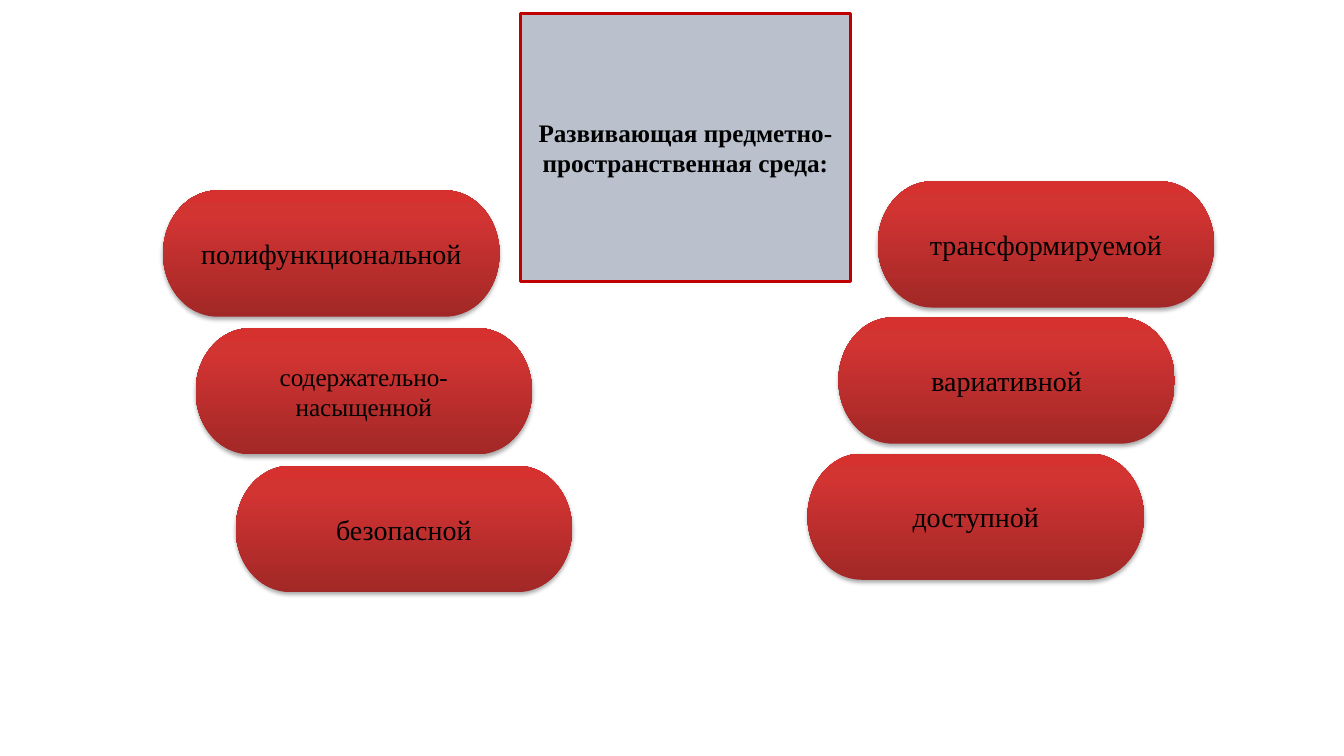
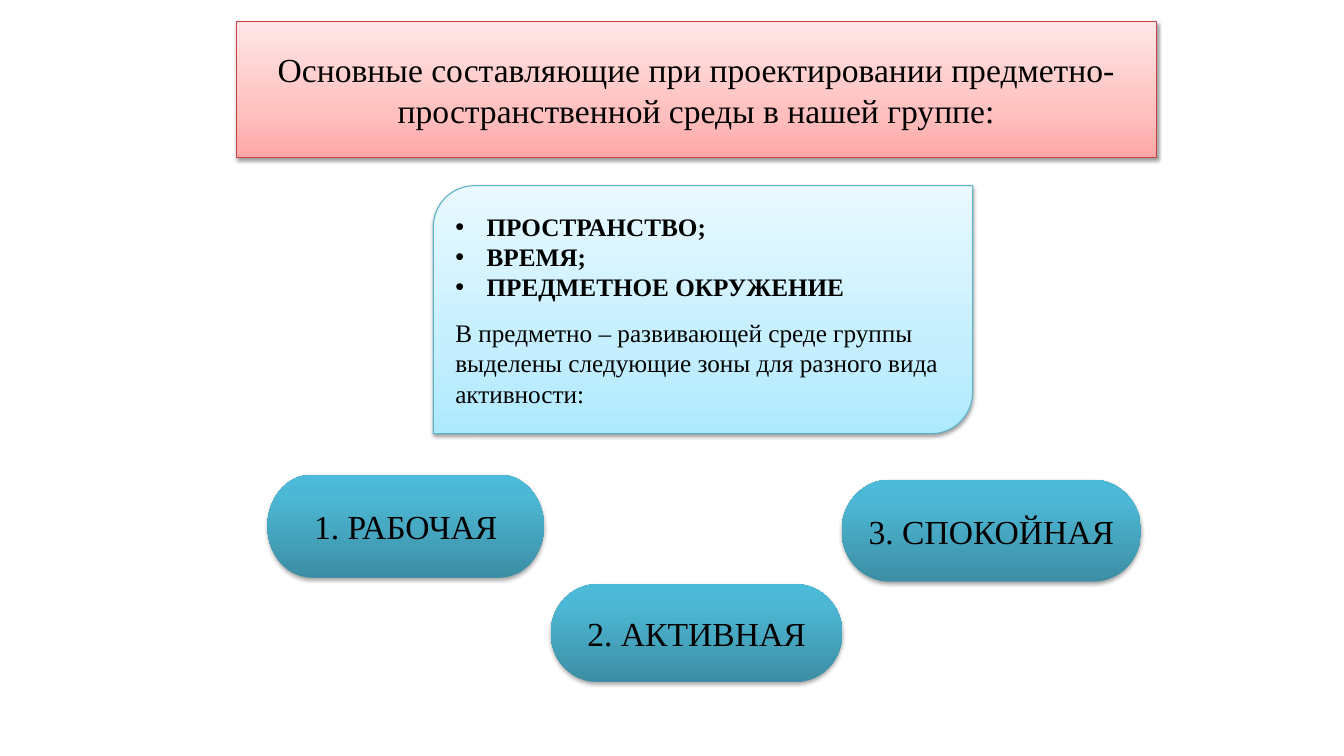
"""Build two slides about the developing spatial environment of a kindergarten group."""
from dataclasses import dataclass

from lxml.etree import SubElement
from pptx import Presentation
from pptx.dml.color import RGBColor
from pptx.enum.shapes import MSO_SHAPE
from pptx.enum.text import MSO_ANCHOR, MSO_AUTO_SIZE, PP_ALIGN
from pptx.oxml.ns import qn
from pptx.util import Cm, Pt


@dataclass(frozen=True)
class Look:
    """Fill stops from bottom to top, outline and shadow of one kind of shape."""
    stops: tuple
    line: str = ""
    line_width: float = 0.75
    shadow: tuple = ()


@dataclass(frozen=True)
class Theme:
    """Colours, type sizes and looks shared by the slides."""
    font: str = "Times New Roman"
    text: str = "000000"
    heading_size: int = 24
    label_size: int = 20
    body_size: int = 18
    paragraph_gap: int = 11
    dark_shadow: tuple = (35, 3.1, 1.8)
    light_shadow: tuple = (38, 3.1, 1.6)
    grey: Look = Look(((0, "BAC0CC"),), "C00000", 2)
    red: Look = Look(((0, "A22827"), (80, "D23432"), (100, "D6312F")), shadow=dark_shadow)
    teal: Look = Look(((0, "3C8EA4"), (80, "4DB8D5"), (100, "4BBBD9")), shadow=dark_shadow)
    pink: Look = Look(((0, "FFA7A7"), (35, "FFC1C0"), (100, "FFE7E7")), "C54342",
                      shadow=light_shadow)
    sky: Look = Look(((0, "ADE9FF"), (35, "C5EFFF"), (100, "E9F9FF")), "5BB3CA",
                     shadow=light_shadow)


THEME = Theme()

ENVIRONMENT_TITLE = "Развивающая предметно-пространственная среда:"
QUALITY_SIZE = (8.48, 3.18)
QUALITY_COLUMNS = [
    {"top": 4.8, "step": 3.47, "items": [
        (4.11, "полифункциональной", THEME.label_size),
        (4.93, "содержательно-насыщенной", THEME.body_size),
        (5.94, "безопасной", THEME.label_size)]},
    {"top": 4.57, "step": 3.43, "items": [
        (22.12, "трансформируемой", THEME.label_size),
        (21.13, "вариативной", THEME.label_size),
        (20.35, "доступной", THEME.label_size)]},
]

COMPONENTS_TITLE = ("Основные составляющие при проектировании "
                    "предметно-пространственной среды в нашей группе:")
COMPONENTS = ["ПРОСТРАНСТВО;", "ВРЕМЯ;", "ПРЕДМЕТНОЕ ОКРУЖЕНИЕ"]
ZONES_INTRO = ("В предметно – развивающей среде группы выделены "
               "следующие зоны для разного вида активности:")
ZONES = [
    ("1. РАБОЧАЯ", (6.74, 11.96, 6.97, 2.6)),
    ("3. СПОКОЙНАЯ", (21.21, 12.09, 7.55, 2.57)),
    ("2. АКТИВНАЯ", (13.88, 14.72, 7.35, 2.47)),
]


def add_child(parent, tag, **attributes):
    """Append a DrawingML element to a parent element."""
    return SubElement(parent, qn(tag), {key: str(value) for key, value in attributes.items()})


def add_color(parent, color):
    """Append an RGB colour element."""
    return add_child(parent, "a:srgbClr", val=color)


def apply_look(shape, look):
    """Give a shape its fill, outline and shadow."""
    if len(look.stops) == 1:
        shape.fill.solid()
        shape.fill.fore_color.rgb = RGBColor.from_string(look.stops[0][1])
    else:
        shape.fill.gradient()
        gradient = shape._element.spPr.find(qn("a:gradFill"))
        for child in list(gradient):
            gradient.remove(child)
        stop_list = add_child(gradient, "a:gsLst")
        for position, color in look.stops:
            add_color(add_child(stop_list, "a:gs", pos=position * 1000), color)
        add_child(gradient, "a:lin", ang=270 * 60000, scaled=0)
    if look.line:
        shape.line.color.rgb = RGBColor.from_string(look.line)
        shape.line.width = Pt(look.line_width)
    else:
        shape.line.fill.background()
    shape.shadow.inherit = False
    if look.shadow:
        opacity, blur, distance = look.shadow
        effects = shape._element.spPr.find(qn("a:effectLst"))
        shadow = add_child(effects, "a:outerShdw", blurRad=Pt(blur), dist=Pt(distance),
                           dir=90 * 60000, rotWithShape=0)
        add_child(add_color(shadow, THEME.text), "a:alpha", val=opacity * 1000)


def add_text(paragraph, text, size, bold=False, alignment=PP_ALIGN.CENTER):
    """Add one formatted run to a paragraph."""
    paragraph.alignment = alignment
    run = paragraph.add_run()
    run.text = text
    run.font.name = THEME.font
    run.font.size = Pt(size)
    run.font.bold = bold
    run.font.color.rgb = RGBColor.from_string(THEME.text)


def prepare(shape, look):
    """Style a shape and return its wrapped, vertically centred text frame."""
    apply_look(shape, look)
    frame = shape.text_frame
    frame.word_wrap = True
    frame.auto_size = MSO_AUTO_SIZE.NONE
    frame.vertical_anchor = MSO_ANCHOR.MIDDLE
    return frame


def add_titled_slide(presentation, text, box, preset, look, size, bold=False):
    """Add a title-only slide whose title is set inside a preset outline."""
    slide = presentation.slides.add_slide(presentation.slide_layouts[5])
    title = slide.shapes.title
    title.left, title.top, title.width, title.height = map(Cm, box)
    properties = title._element.spPr
    geometry = add_child(properties, "a:prstGeom", prst=preset)
    add_child(geometry, "a:avLst")
    add_text(prepare(title, look).paragraphs[0], text, size, bold)
    return slide


def add_pill(slide, text, box, look, size):
    """Add a rounded label."""
    pill = slide.shapes.add_shape(MSO_SHAPE.FLOWCHART_TERMINATOR, *map(Cm, box))
    add_text(prepare(pill, look).paragraphs[0], text, size)


def add_bullet(paragraph):
    """Give a paragraph a hanging round bullet."""
    properties = paragraph._p.get_or_add_pPr()
    indent = Cm(0.79)
    properties.set("marL", str(indent))
    properties.set("indent", str(-indent))
    add_child(properties, "a:buFont", typeface="Arial")
    add_child(properties, "a:buChar", char="•")


def build_environment_slide(presentation):
    """Build the slide with the qualities of the environment."""
    slide = add_titled_slide(presentation, ENVIRONMENT_TITLE, (13.11, 0.33, 8.33, 6.76),
                             "ellipse", THEME.grey, THEME.body_size, bold=True)
    for column in QUALITY_COLUMNS:
        for row, (left, text, size) in enumerate(column["items"]):
            top = column["top"] + row * column["step"]
            add_pill(slide, text, (left, top, *QUALITY_SIZE), THEME.red, size)


def build_components_slide(presentation):
    """Build the slide with the components and activity zones."""
    slide = add_titled_slide(presentation, COMPONENTS_TITLE, (5.95, 0.53, 23.19, 3.45),
                             "flowChartTerminator", THEME.pink, THEME.heading_size)
    panel = slide.shapes.add_shape(MSO_SHAPE.ROUND_2_DIAG_RECTANGLE,
                                   *map(Cm, (10.92, 4.68, 13.59, 6.25)))
    frame = prepare(panel, THEME.sky)
    for index, component in enumerate(COMPONENTS):
        paragraph = frame.add_paragraph() if index else frame.paragraphs[0]
        add_bullet(paragraph)
        add_text(paragraph, component, THEME.body_size, True, PP_ALIGN.LEFT)
    paragraph = frame.add_paragraph()
    paragraph.space_before = Pt(THEME.paragraph_gap)
    add_text(paragraph, ZONES_INTRO, THEME.body_size, alignment=PP_ALIGN.LEFT)
    for text, box in ZONES:
        add_pill(slide, text, box, THEME.teal, THEME.heading_size)


def main():
    """Build and save the presentation."""
    presentation = Presentation()
    presentation.slide_width = Cm(33.87)
    presentation.slide_height = Cm(19.05)
    build_environment_slide(presentation)
    build_components_slide(presentation)
    presentation.save("out.pptx")


if __name__ == "__main__":
    main()
